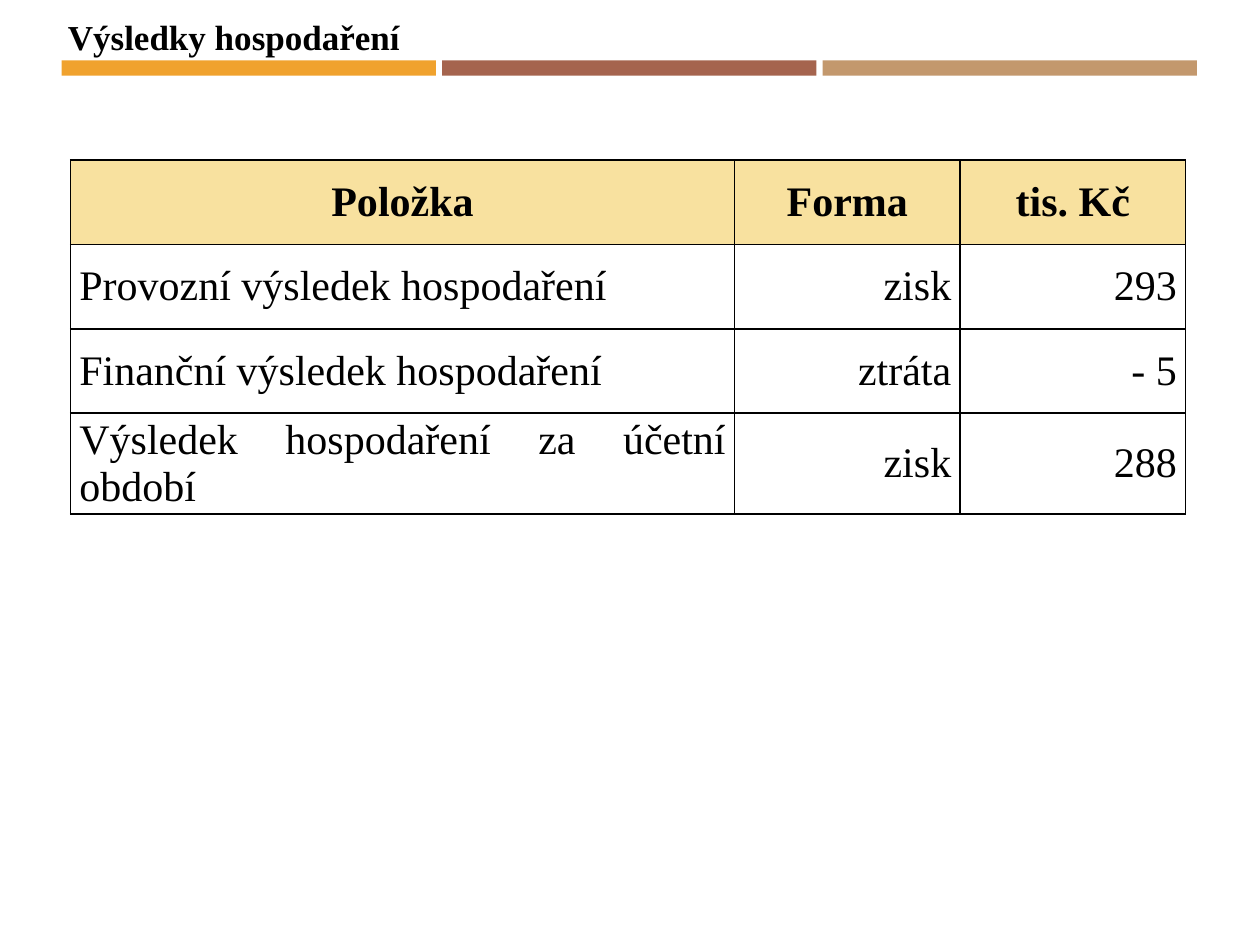
from lxml.etree import SubElement
from pptx import Presentation
from pptx.dml.color import RGBColor as RGB
from pptx.enum.shapes import MSO_SHAPE as SHAPE
from pptx.enum.text import MSO_ANCHOR as ANCHOR, MSO_AUTO_SIZE as AUTO, PP_ALIGN as ALIGN
from pptx.oxml.ns import qn
from pptx.util import Inches, Pt

COLORS = {"orange": "F0A22E", "brown": "A5644E", "tan": "C3986D",
          "head": "F8E19F", "black": "000000"}


def style(par, size, bold):
    for run in par.runs:
        run.font.name = "Times New Roman"
        run.font.size = Pt(size)
        run.font.bold = bold
        run.font.color.rgb = RGB.from_string(COLORS["black"])


def border(cell):
    """Draw a thin black line on all four sides; call before filling."""
    props = cell._tc.get_or_add_tcPr()
    for side in ("lnL", "lnR", "lnT", "lnB"):
        line = SubElement(props, qn(f"a:{side}"), w=str(Pt(1)))
        fill = SubElement(line, qn("a:solidFill"))
        SubElement(fill, qn("a:srgbClr"), val=COLORS["black"])


prs = Presentation()
prs.slide_width, prs.slide_height = Inches(10), Inches(7.5)
slide = prs.slides.add_slide(prs.slide_layouts[6])
shapes = slide.shapes

# Colour bars under the title
for i, name in enumerate(("orange", "brown", "tan")):
    bar = shapes.add_shape(SHAPE.RECTANGLE, Inches(0.49 + i * 3.02), Inches(0.48),
                           Inches(2.97), Inches(0.12))
    bar.shadow.inherit = False
    bar.fill.solid()
    bar.fill.fore_color.rgb = RGB.from_string(COLORS[name])
    bar.line.fill.background()

# Title
title = shapes.add_textbox(Inches(0.44), Inches(0.07), Inches(2.86), Inches(0.44))
frame = title.text_frame
frame.word_wrap = False
frame.auto_size = AUTO.SHAPE_TO_FIT_TEXT
frame.text = "Výsledky hospodaření"
style(frame.paragraphs[0], 20, True)

# Results table
rows = [
    ("Položka", "Forma", "tis. Kč"),
    ("Provozní výsledek hospodaření", "zisk", "293"),
    ("Finanční výsledek hospodaření", "ztráta", "- 5"),
    ("Výsledek hospodaření za účetní období", "zisk", "288"),
]
widths = (5.27, 1.79, 1.79)
heights = (0.67, 0.67, 0.67, 0.8)
table = shapes.add_table(len(rows), len(widths), Inches(0.56), Inches(1.27),
                         Inches(sum(widths)), Inches(sum(heights))).table
table.horz_banding = False
for col, width in zip(table.columns, widths):
    col.width = Inches(width)
for row, height in zip(table.rows, heights):
    row.height = Inches(height)

for r, row in enumerate(rows):
    for c, text in enumerate(row):
        cell = table.cell(r, c)
        cell.text = text
        cell.vertical_anchor = ANCHOR.MIDDLE
        cell.margin_left = cell.margin_right = Inches(0.07)
        cell.margin_top = cell.margin_bottom = 0
        border(cell)
        par = cell.text_frame.paragraphs[0]
        style(par, 24, r == 0)
        if r == 0:
            par.alignment = ALIGN.CENTER
            cell.fill.solid()
            cell.fill.fore_color.rgb = RGB.from_string(COLORS["head"])
        else:
            par.alignment = ALIGN.RIGHT if c else ALIGN.JUSTIFY
            cell.fill.background()

prs.save("out.pptx")
